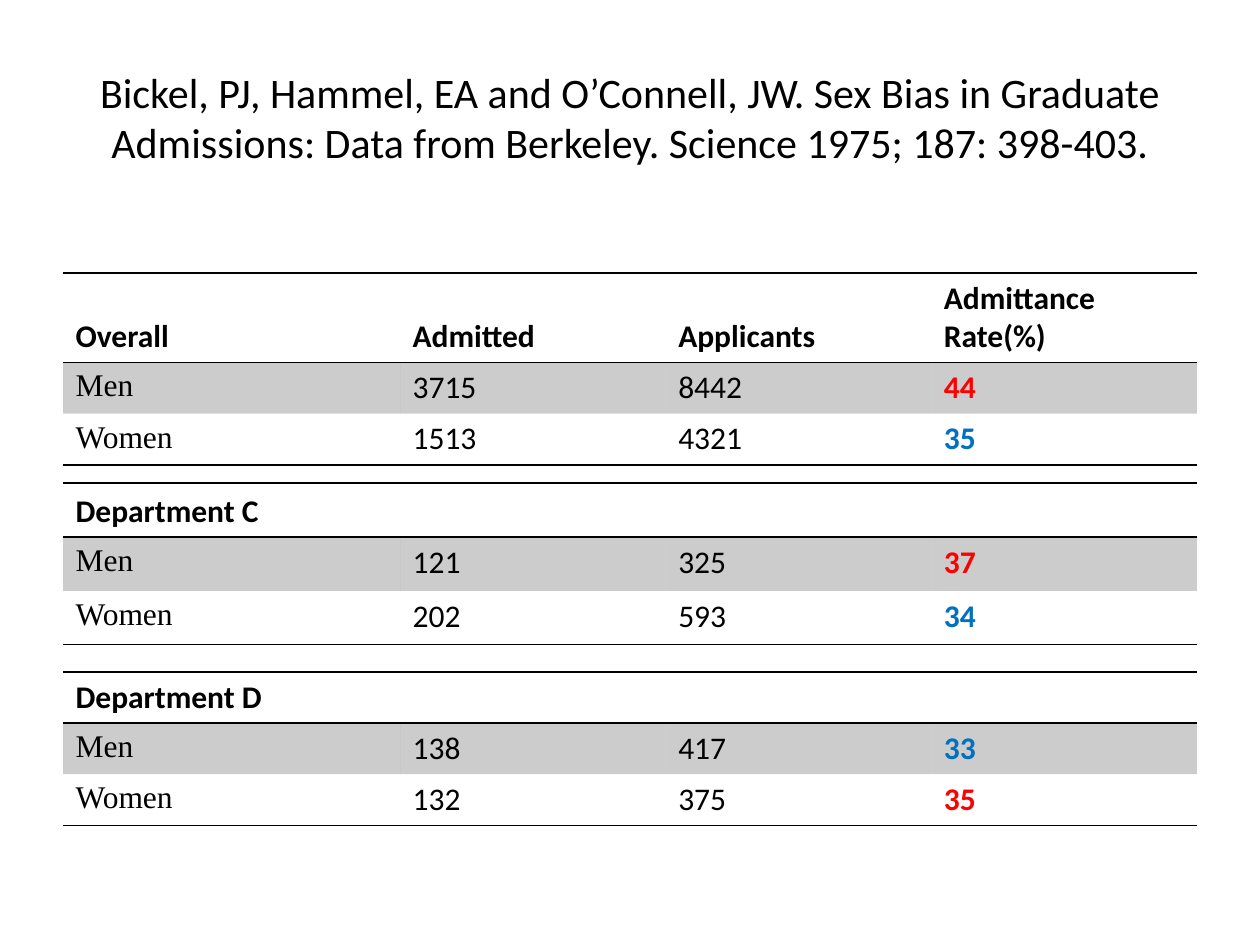
from lxml.etree import SubElement
from pptx import Presentation
from pptx.dml.color import RGBColor
from pptx.enum.text import MSO_ANCHOR, PP_ALIGN
from pptx.oxml.ns import qn
from pptx.util import Pt

INK = {"black": "000000", "red": "FF0000", "blue": "0070C0"}
COLS = (192.6, 151.8, 151.8, 151.8)
HEAD = ("Overall", "Admitted", "Applicants", "Admittance Rate(%)")


class Deck:
    """Holds the style and the current slide, and draws its elements."""

    def __init__(self, wide, high):
        self.show = Presentation()
        self.show.slide_width, self.show.slide_height = Pt(wide), Pt(high)
        self.slide = self.show.slides.add_slide(self.show.slide_layouts[5])
        self.sans, self.serif = "Calibri", "Times New Roman"

    def style(self, para, size, face, ink="black", bold=False):
        for run in para.runs:
            font = run.font
            font.size, font.name, font.bold = Pt(size), face, bold
            font.color.rgb = RGBColor.from_string(INK[ink])

    def title(self, text, left, top, wide, high):
        box = self.slide.shapes.title
        box.left, box.top, box.width, box.height = map(Pt, (left, top, wide, high))
        frame = box.text_frame
        frame.text, frame.word_wrap = text, True
        frame.vertical_anchor = MSO_ANCHOR.MIDDLE
        frame.paragraphs[0].alignment = PP_ALIGN.CENTER
        self.style(frame.paragraphs[0], 24, self.sans)

    def border(self, cell, sides):
        props = cell._tc.get_or_add_tcPr()
        for side in "LRTB":
            line = SubElement(props, qn(f"a:ln{side}"), w=str(Pt(1)))
            if side in sides:
                fill = SubElement(line, qn("a:solidFill"))
                SubElement(fill, qn("a:srgbClr"), val=INK["black"])
            else:
                SubElement(line, qn("a:noFill"))

    def shade(self, cell, alpha):
        cell.fill.solid()
        cell.fill.fore_color.rgb = RGBColor.from_string(INK["black"])
        tint = cell._tc.tcPr.find(f"{qn('a:solidFill')}/{qn('a:srgbClr')}")
        SubElement(tint, qn("a:alpha"), val=str(alpha * 1000))

    def table(self, top, highs, rows, inks):
        frame = self.slide.shapes.add_table(
            len(rows), len(COLS), Pt(36), Pt(top), Pt(sum(COLS)), Pt(sum(highs)))
        grid = frame.table
        grid.horz_banding = False
        for col, wide in zip(grid.columns, COLS):
            col.width = Pt(wide)
        for r, (row, high) in enumerate(zip(rows, highs)):
            grid.rows[r].height = Pt(high)
            for c, text in enumerate(row):
                cell = grid.cell(r, c)
                self.border(cell, ("TB", "T", "B")[r])
                if r == 1:
                    self.shade(cell, 20)
                else:
                    cell.fill.background()
                if r == 0:
                    cell.vertical_anchor = MSO_ANCHOR.BOTTOM
                cell.text_frame.text = text
                rate = r > 0 and c == 3
                face = self.serif if r and c == 0 else self.sans
                ink = inks[r - 1] if rate else "black"
                self.style(cell.text_frame.paragraphs[0], 18, face, ink, r == 0 or rate)


def main():
    deck = Deck(720, 540)
    deck.title("Bickel, PJ, Hammel, EA and O’Connell, JW. Sex Bias in Graduate "
               "Admissions: Data from Berkeley. Science 1975; 187: 398-403.",
               36, 21.6, 648, 90)
    groups = (
        (156, (51.2, 29.2, 29.2), HEAD,
         ("3715", "8442", "44"), ("1513", "4321", "35"), ("red", "blue")),
        (276, (30.8, 30.8, 30.8), ("Department C", "", "", ""),
         ("121", "325", "37"), ("202", "593", "34"), ("red", "blue")),
        (384, (29.2, 29.2, 29.2), ("Department D", "", "", ""),
         ("138", "417", "33"), ("132", "375", "35"), ("blue", "red")),
    )
    for top, highs, head, men, women, inks in groups:
        rows = (head, ("Men", *men), ("Women", *women))
        deck.table(top, highs, rows, inks)
    deck.show.save("out.pptx")


if __name__ == "__main__":
    main()
